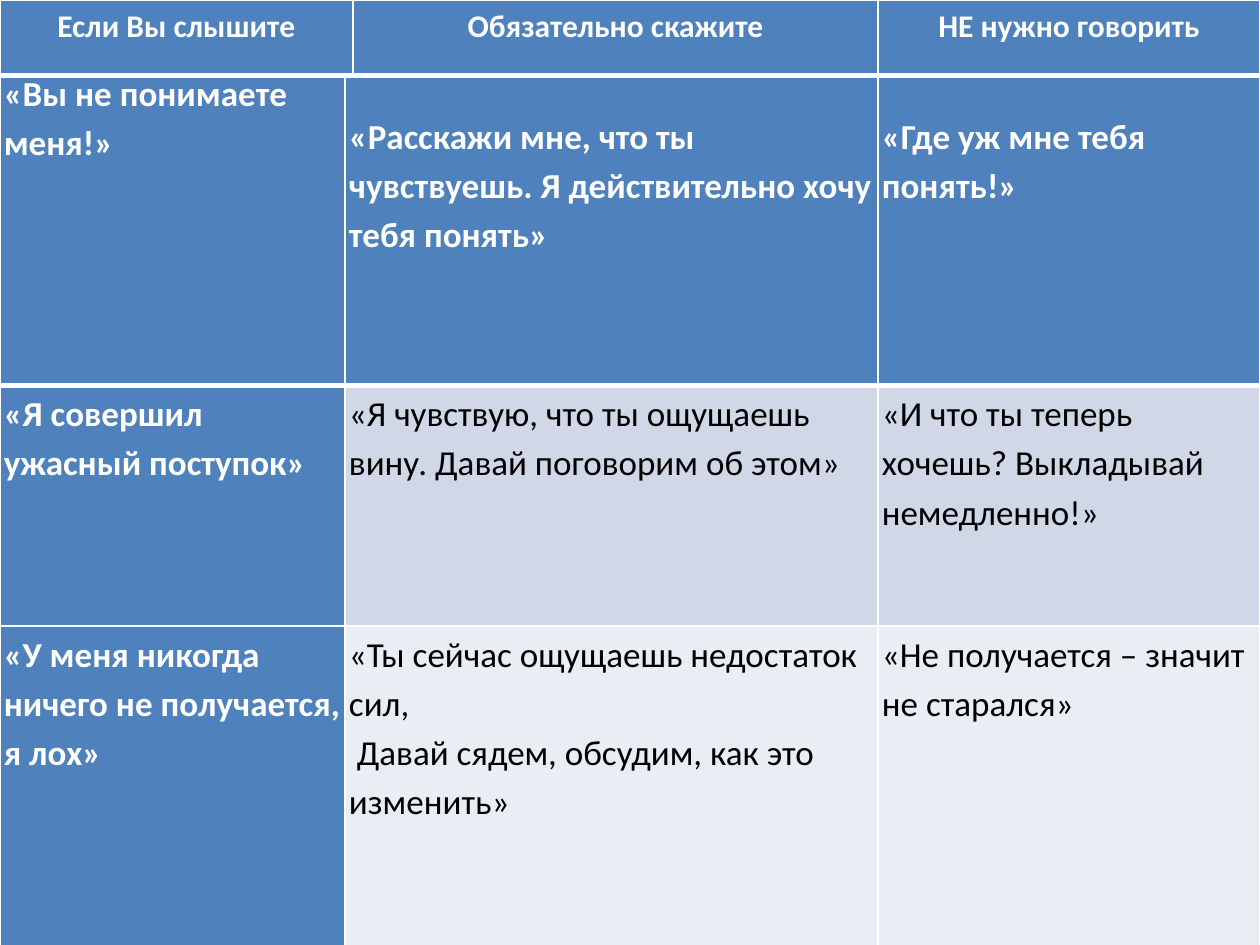
from dataclasses import dataclass

from lxml.etree import SubElement
from pptx import Presentation
from pptx.dml.color import RGBColor
from pptx.enum.text import PP_ALIGN
from pptx.oxml.ns import qn
from pptx.util import Inches, Pt


@dataclass(frozen=True)
class Theme:
    font: str = "Calibri"
    accent: str = "4F81BD"
    band_dark: str = "D0D8E8"
    band_light: str = "E9EDF4"
    light: str = "FFFFFF"
    dark: str = "000000"
    head_size: int = 18
    body_size: int = 20
    spacing: float = 1.15
    thin: int = 1
    thick: int = 3


def write(tf, text, *, font, size, color, bold=False, align=None, spacing=1.0):
    """Fill a text frame, one paragraph for each line of text."""
    tf.word_wrap = True
    for i, line in enumerate(text.split("\n")):
        p = tf.paragraphs[0] if i == 0 else tf.add_paragraph()
        p.line_spacing = spacing
        p.alignment = align
        r = p.add_run()
        r.text = line
        r.font.name = font
        r.font.size = Pt(size)
        r.font.bold = bold
        r.font.color.rgb = RGBColor.from_string(color)


class SlideBuilder:
    def __init__(self, s, theme):
        self.s = s
        self.theme = theme

    def table(self, top, widths, heights):
        frame = self.s.shapes.add_table(
            len(heights), len(widths), Inches(0), Inches(top),
            Inches(sum(widths)), Inches(sum(heights)))
        table = frame.table
        table.first_row = table.horz_banding = False
        for column, width in zip(table.columns, widths):
            column.width = Inches(width)
        for row, height in zip(table.rows, heights):
            row.height = Inches(height)
        return table

    def cell(self, cell, text, fill, size, *, align=None, drop=0.01,
             top=None, bottom=None):
        t = self.theme
        on_accent = fill == t.accent
        cell.margin_left = cell.margin_right = Inches(0.03)
        cell.margin_top, cell.margin_bottom = Inches(drop), Inches(0)
        self.borders(cell, top or t.thin, bottom or t.thin)
        cell.fill.solid()
        cell.fill.fore_color.rgb = RGBColor.from_string(fill)
        write(cell.text_frame, text, font=t.font, size=size,
              color=t.light if on_accent else t.dark, bold=on_accent,
              align=align, spacing=t.spacing)

    def borders(self, cell, top, bottom):
        tc_pr = cell._tc.get_or_add_tcPr()
        sides = {"L": self.theme.thin, "R": self.theme.thin,
                 "T": top, "B": bottom}
        for side, width in sides.items():
            ln = SubElement(tc_pr, qn(f"a:ln{side}"), w=str(Pt(width)))
            fill = SubElement(ln, qn("a:solidFill"))
            SubElement(fill, qn("a:srgbClr"), val=self.theme.light)


HEADINGS = ["Если Вы слышите", "Обязательно скажите", "НЕ нужно говорить"]
PHRASES = [
    ["«Вы не понимаете меня!»",
     "«Расскажи мне, что ты чувствуешь. Я действительно хочу тебя понять»",
     "«Где уж мне тебя понять!»"],
    ["«Я совершил ужасный поступок»",
     "«Я чувствую, что ты ощущаешь вину. Давай поговорим об этом»",
     "«И что ты теперь хочешь? Выкладывай немедленно!»"],
    ["«У меня никогда ничего не получается, я лох»",
     "«Ты сейчас ощущаешь недостаток сил,\n"
     " Давай сядем, обсудим, как это изменить»",
     "«Не получается – значит не старался»"],
]


def main():
    prs = Presentation()
    prs.slide_width, prs.slide_height = Inches(10), Inches(7.5)
    theme = Theme()
    slide = SlideBuilder(prs.slides.add_slide(prs.slide_layouts[6]), theme)

    # Phrases: accent first row and first column, banded answers
    body = slide.table(0.52, [2.74, 4.23, 3.03], [2.54, 1.91, 2.54])
    row_fills = [theme.accent, theme.band_dark, theme.band_light]
    for i, (phrases, row_fill) in enumerate(zip(PHRASES, row_fills)):
        for j, phrase in enumerate(phrases):
            slide.cell(body.cell(i, j), phrase,
                       theme.accent if j == 0 else row_fill, theme.body_size,
                       drop=0.35 if i == 0 and j > 0 else 0.01,
                       top=theme.thick if i == 1 else None,
                       bottom=theme.thick if i == 0 else None)

    # Column headings, laid over the top edge of the phrases
    head = slide.table(0, [2.8, 4.17, 3.03], [0.6])
    for j, heading in enumerate(HEADINGS):
        slide.cell(head.cell(0, j), heading, theme.accent, theme.head_size,
                   align=PP_ALIGN.CENTER, bottom=theme.thick)

    prs.save("out.pptx")


if __name__ == "__main__":
    main()
